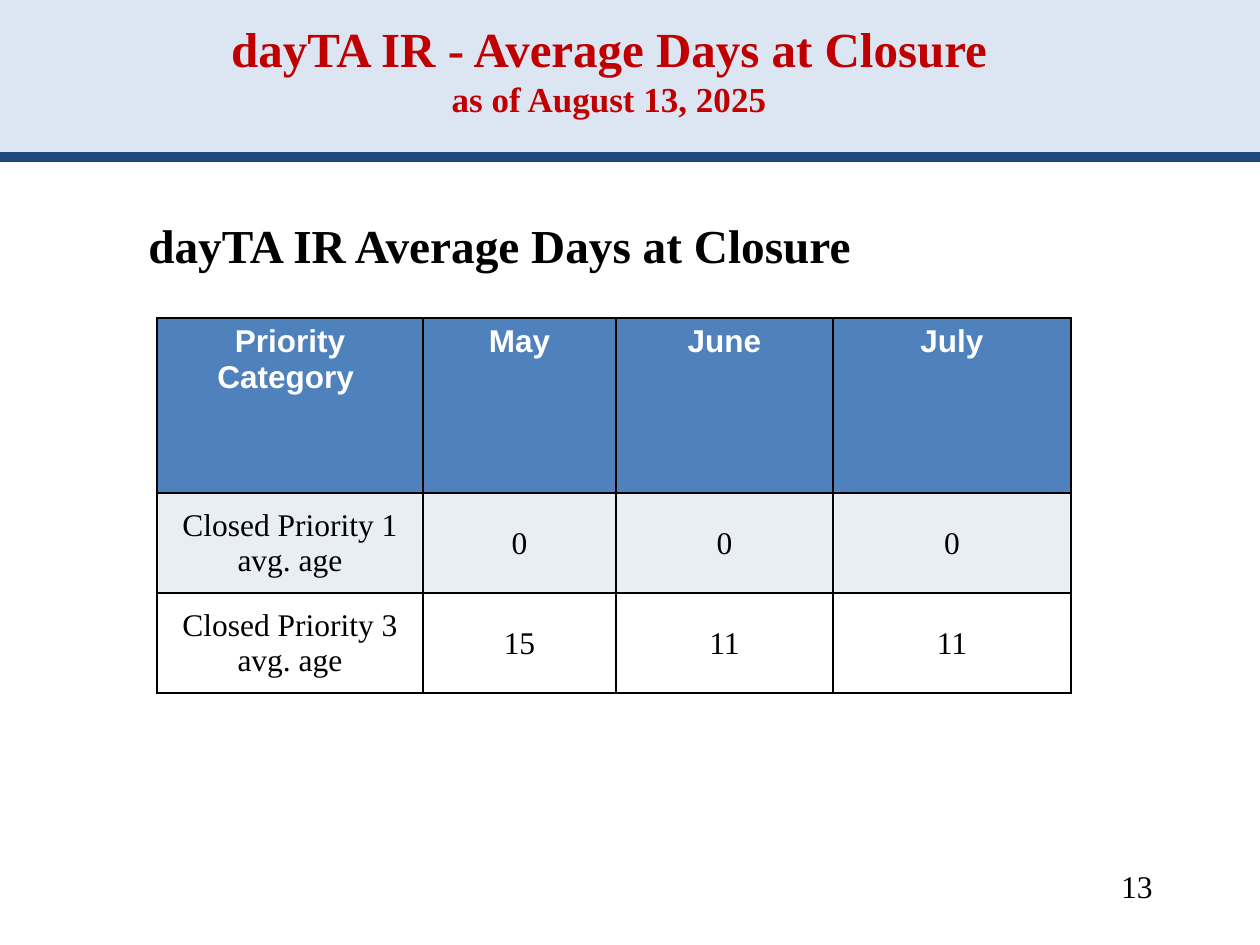
import pptx
import pptx.util
import pptx.dml.color
import pptx.enum.shapes
import pptx.enum.text
import pptx.oxml
import pptx.oxml.ns

SCALE = 914400 / 126
ALIGN = pptx.enum.text.PP_ALIGN
ANCHOR = pptx.enum.text.MSO_ANCHOR
SERIF = "Times New Roman"
TITLE = {"name": SERIF, "size": 28, "bold": True, "color": "C00000"}
DATE = {**TITLE, "size": 20}
HEADING = {"name": SERIF, "size": 27, "bold": True, "color": "000000"}
BODY = {"name": SERIF, "size": 18, "bold": False, "color": "000000"}
HEAD = {"name": "Arial", "size": 18, "bold": True, "color": "FFFFFF"}

WIDTHS = [266, 193, 217, 238]
HEIGHTS = [175, 100, 100]
ROWS = [
    ["Priority Category ", "May", "June", "July"],
    ["Closed Priority 1 avg. age", "0", "0", "0"],
    ["Closed Priority 3 avg. age", "15", "11", "11"],
]
FILLS = ["4F81BD", "E9EDF4", "FFFFFF"]


def px(num):
    return pptx.util.Emu(round(num * SCALE))


def rgb(code):
    return pptx.dml.color.RGBColor.from_string(code)


def style(font, form):
    for key, val in form.items():
        if key == "color":
            font.color.rgb = rgb(val)
        else:
            setattr(font, key, pptx.util.Pt(val) if key == "size" else val)


def write(para, text, form, align):
    para.alignment = align
    run = para.add_run()
    run.text = text
    style(run.font, form)


def label(slide, box, parts, align, anchor=ANCHOR.TOP):
    """Text box whose parts stand on lines of one paragraph."""
    frame = slide.shapes.add_textbox(*map(px, box)).text_frame
    frame.word_wrap = True
    frame.vertical_anchor = anchor
    para = frame.paragraphs[0]
    for num, (text, form) in enumerate(parts):
        if num:
            para.add_line_break()
        write(para, text, form, align)


def banner(slide, box):
    left, top, width, height = box
    # Pale band
    band = slide.shapes.add_shape(
        pptx.enum.shapes.MSO_SHAPE.RECTANGLE, *map(px, box))
    band.shadow.inherit = False
    band.fill.solid()
    band.fill.fore_color.rgb = rgb("DCE6F2")
    band.line.fill.background()
    # Blue rule
    base = top + height - 4
    rule = slide.shapes.add_connector(
        pptx.enum.shapes.MSO_CONNECTOR.STRAIGHT,
        px(left), px(base), px(left + width), px(base))
    rule.line.color.rgb = rgb("1F497D")
    rule.line.width = pptx.util.Pt(5.5)
    rule._element.spPr.append(pptx.oxml.parse_xml(
        f"<a:effectLst {pptx.oxml.ns.nsdecls('a')}/>"))
    # Title and date
    label(slide, (left + 21, top, 1176, 126),
          [("dayTA IR - Average Days at Closure", TITLE),
           ("as of August 13, 2025", DATE)], ALIGN.CENTER, ANCHOR.BOTTOM)


def border(cell):
    props = cell._tc.get_or_add_tcPr()
    for num, side in enumerate(("lnL", "lnR", "lnT", "lnB")):
        props.insert(num, pptx.oxml.parse_xml(
            f'<a:{side} {pptx.oxml.ns.nsdecls("a")} w="12700"><a:solidFill>'
            f'<a:srgbClr val="000000"/></a:solidFill></a:{side}>'))


def grid(slide, left, top):
    table = slide.shapes.add_table(
        len(ROWS), len(WIDTHS), px(left), px(top),
        px(sum(WIDTHS)), px(sum(HEIGHTS))).table
    for col, width in zip(table.columns, WIDTHS):
        col.width = px(width)
    for i, (row, height) in enumerate(zip(table.rows, HEIGHTS)):
        row.height = px(height)
        for j, cell in enumerate(row.cells):
            cell.fill.solid()
            cell.fill.fore_color.rgb = rgb(FILLS[i])
            border(cell)
            cell.vertical_anchor = ANCHOR.MIDDLE if i else ANCHOR.TOP
            if i and j:
                pads = {"left": 1, "right": 1, "top": 1, "bottom": 0}
                for side, pad in pads.items():
                    setattr(cell, "margin_" + side, px(pad))
            write(cell.text_frame.paragraphs[0], ROWS[i][j],
                  BODY if i else HEAD, ALIGN.CENTER)


def main():
    deck = pptx.Presentation()
    deck.slide_width, deck.slide_height = px(1260), px(945)
    slide = deck.slides.add_slide(deck.slide_layouts[6])
    banner(slide, (0, 0, 1260, 161))
    # Table with its heading
    label(slide, (136, 210, 1061, 71),
          [("dayTA IR Average Days at Closure", HEADING)], ALIGN.LEFT)
    grid(slide, 157, 318)
    # Page number
    label(slide, (903, 861, 262, 63), [("13", BODY)], ALIGN.RIGHT)
    deck.save("out.pptx")


if __name__ == "__main__":
    main()
